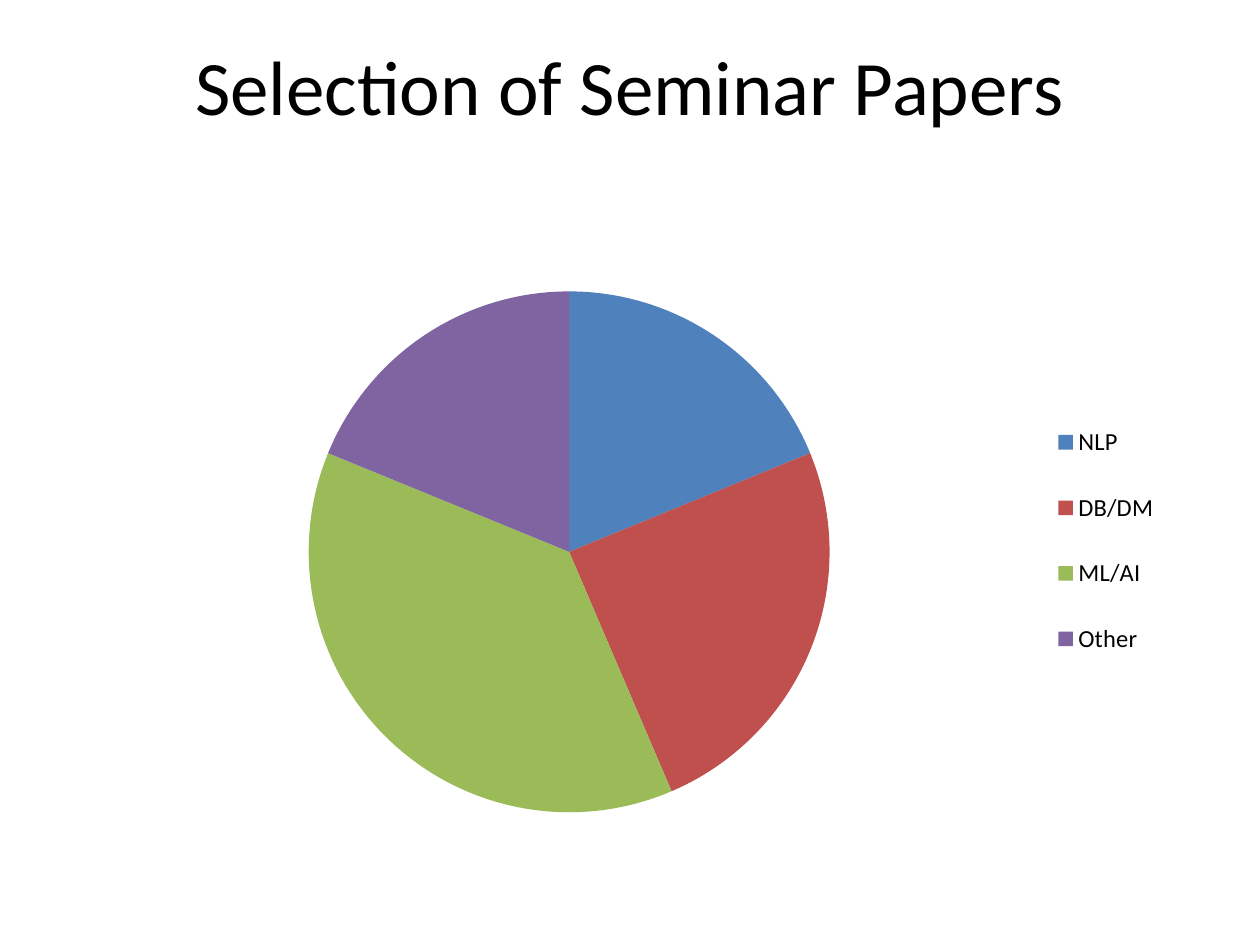
from lxml import etree
from pptx import Presentation
from pptx import util as u
from pptx.chart import data as chart_data
from pptx.dml import color
from pptx.enum import chart as chart_enum, text
from pptx.oxml import ns

TITLE = "Selection of Seminar Papers"
SERIES = "Series 1"
SHARES = [
    ("NLP", 19, "4F81BD"),
    ("DB/DM", 25, "C0504D"),
    ("ML/AI", 38, "9BBB59"),
    ("Other", 19, "8064A2"),
]
THEME = {"font": "Calibri", "ink": "000000", "paper": "FFFFFF", "title": 44, "legend": 14}
PAGE = (720, 540)
TITLE_AREA = (36, 3.6, 648, 90)
CHART_AREA = (48.24, 156.96, 623.52, 317.52)
PIE_CENTRE = (325.2, 315.4)
PIE_SIZE = 297.7
LEGEND_AREA = (596, 224, 72, 170)


def rgb(value):
    return color.RGBColor.from_string(value)


def style(font, size):
    font.name = THEME["font"]
    font.size = u.Pt(size)
    font.color.rgb = rgb(THEME["ink"])


def set_layout(parent, index, area, inner=False):
    for old in parent.findall(ns.qn("c:layout")):
        parent.remove(old)
    layout = etree.Element(ns.qn("c:layout"))
    manual = etree.SubElement(layout, ns.qn("c:manualLayout"))
    left, top, width, height = CHART_AREA
    fractions = {
        "x": (area[0] - left) / width,
        "y": (area[1] - top) / height,
        "w": area[2] / width,
        "h": area[3] / height,
    }
    settings = {"layoutTarget": "inner"} if inner else {}
    settings.update(xMode="edge", yMode="edge")
    settings.update({key: f"{part:.4f}" for key, part in fractions.items()})
    for key, value in settings.items():
        etree.SubElement(manual, ns.qn(f"c:{key}")).set("val", value)
    parent.insert(index, layout)


def add_title(page):
    box = page.shapes.add_textbox(*map(u.Pt, TITLE_AREA))
    frame = box.text_frame
    frame.word_wrap = True
    frame.vertical_anchor = text.MSO_ANCHOR.MIDDLE
    para = frame.paragraphs[0]
    para.text = TITLE
    para.alignment = text.PP_ALIGN.CENTER
    style(para.font, THEME["title"])


def add_pie(page):
    content = chart_data.CategoryChartData()
    content.categories = [name for name, _, _ in SHARES]
    content.add_series(SERIES, [value for _, value, _ in SHARES])
    chart = page.shapes.add_chart(
        chart_enum.XL_CHART_TYPE.PIE, *map(u.Pt, CHART_AREA), content
    ).chart
    chart.has_title = False
    style(chart.font, THEME["legend"])
    plot = chart.plots[0]
    plot.vary_by_categories = True
    for index, (_, _, fill) in enumerate(SHARES):
        slice_format = plot.series[0].points[index].format
        slice_format.fill.solid()
        slice_format.fill.fore_color.rgb = rgb(fill)
        slice_format.line.fill.background()
    chart.has_legend = True
    legend = chart.legend
    legend.position = chart_enum.XL_LEGEND_POSITION.RIGHT
    legend.include_in_layout = False
    style(legend.font, THEME["legend"])

    root = chart.element
    corner = [centre - PIE_SIZE / 2 for centre in PIE_CENTRE]
    set_layout(root.find(".//" + ns.qn("c:plotArea")), 0, (*corner, PIE_SIZE, PIE_SIZE), True)
    set_layout(root.find(".//" + ns.qn("c:legend")), 1, LEGEND_AREA)


def main():
    deck = Presentation()
    deck.slide_width, deck.slide_height = map(u.Pt, PAGE)
    page = deck.slides.add_slide(deck.slide_layouts[6])
    page.background.fill.solid()
    page.background.fill.fore_color.rgb = rgb(THEME["paper"])
    add_title(page)
    add_pie(page)
    deck.save("out.pptx")


if __name__ == "__main__":
    main()
